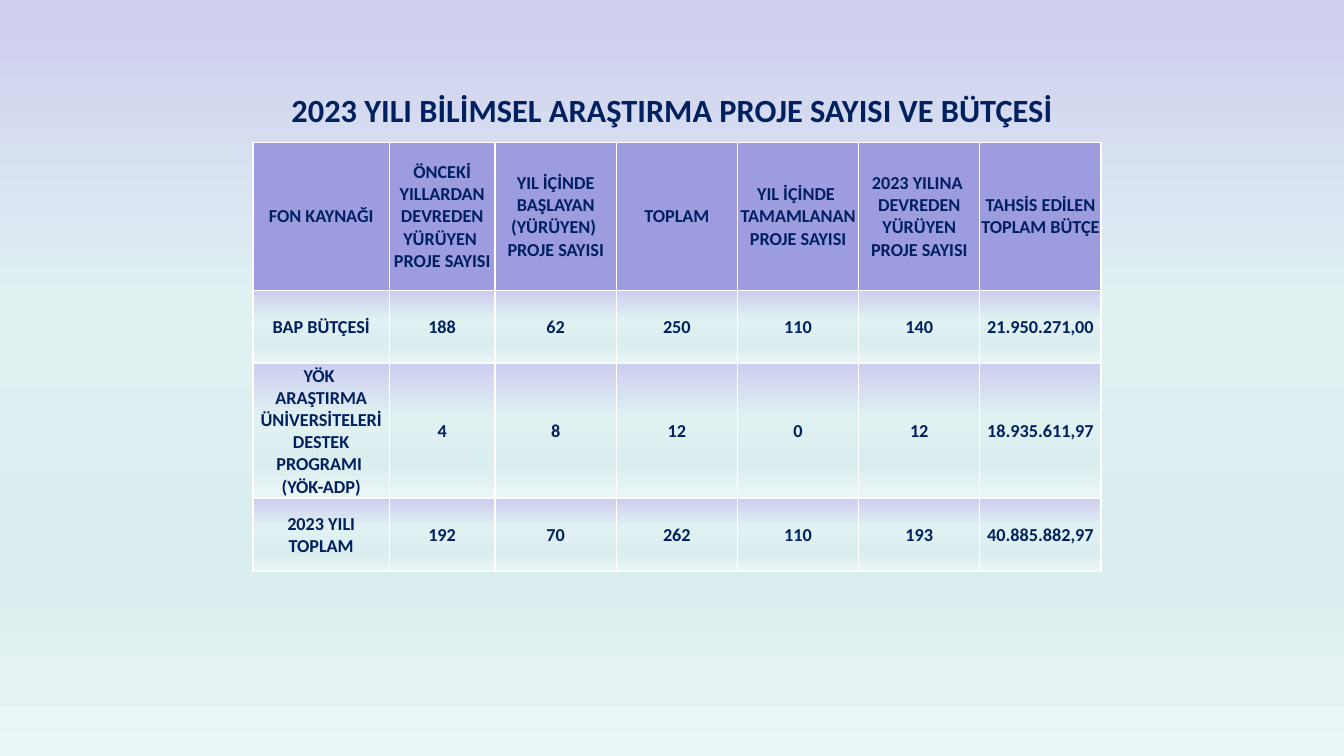
from pptx import Presentation
from pptx import util as u
from pptx.dml import color
from pptx.enum import text
from pptx.oxml import ns
from lxml import etree

hue = color.RGBColor.from_string
NAVY, HEAD, WHITE = "002060", "9C9CDF", "FFFFFF"
STOPS = [(1, "CECEEF"), (40, "E0F1F2"), (74, "DAEDEF"), (100, "EBF6F7")]
WIDE, TALL = 8.41, 4.26
COLS = [1.35, 1.05] + [(WIDE - 1.35 - 1.05) / 5] * 5
ROWS = [TALL - 0.73 - 1.33 - 0.73, 0.73, 1.33, 0.73]
DATA = [
    ["FON KAYNAĞI",
     "ÖNCEKİ YILLARDAN DEVREDEN YÜRÜYEN \nPROJE SAYISI",
     "YIL İÇİNDE BAŞLAYAN (YÜRÜYEN) \nPROJE SAYISI",
     "TOPLAM",
     "YIL İÇİNDE \nTAMAMLANAN PROJE SAYISI",
     "2023 YILINA \nDEVREDEN YÜRÜYEN PROJE SAYISI",
     "TAHSİS EDİLEN TOPLAM BÜTÇE"],
    ["BAP BÜTÇESİ", "188", "62", "250", "110", "140", "21.950.271,00"],
    ["YÖK \nARAŞTIRMA ÜNİVERSİTELERİ DESTEK PROGRAMI \n(YÖK-ADP)",
     "4", "8", "12", "0", "12", "18.935.611,97"],
    ["2023 YILI TOPLAM", "192", "70", "262", "110", "193", "40.885.882,97"],
]


def shade(fill, node):
    fill.gradient()
    fill.gradient_angle = 270
    stops = next(node.iter(ns.qn("a:gsLst")))
    for old in list(stops):
        stops.remove(old)
    for pos, tone in STOPS:
        stop = etree.SubElement(stops, ns.qn("a:gs"), pos=str(pos * 1000))
        etree.SubElement(stop, ns.qn("a:srgbClr"), val=tone)


def write(frame, words, size):
    for i, line in enumerate(words.split("\n")):
        para = frame.add_paragraph() if i else frame.paragraphs[0]
        para.alignment = text.PP_ALIGN.CENTER
        run = para.add_run()
        run.text = line
        run.font.name = "Calibri"
        run.font.size = u.Pt(size)
        run.font.bold = True
        run.font.color.rgb = hue(NAVY)


deck = Presentation()
deck.slide_width, deck.slide_height = u.Inches(13.33), u.Inches(7.5)
slide = deck.slides.add_slide(deck.slide_layouts[5])
shade(slide.background.fill, slide.element)

title = slide.shapes.title
title.element.set("useBgFill", "1")
title.left, title.top = u.Inches(2.46), u.Inches(0.69)
title.width, title.height = u.Inches(8.42), u.Inches(0.79)
title.text_frame.vertical_anchor = text.MSO_ANCHOR.MIDDLE
title.text_frame.auto_size = text.MSO_AUTO_SIZE.NONE
write(title.text_frame, "2023 YILI BİLİMSEL ARAŞTIRMA PROJE SAYISI VE BÜTÇESİ", 23.1)

table = slide.shapes.add_table(
    len(ROWS), len(COLS), u.Inches(2.51), u.Inches(1.41),
    u.Inches(WIDE), u.Inches(TALL)).table
for col, wide in zip(table.columns, COLS):
    col.width = u.Inches(wide)
for row, tall in zip(table.rows, ROWS):
    row.height = u.Inches(tall)

for r, line in enumerate(DATA):
    for c, words in enumerate(line):
        cell = table.cell(r, c)
        cell.margin_left = cell.margin_right = cell.margin_top = u.Inches(0.01)
        cell.margin_bottom = 0
        cell.vertical_anchor = text.MSO_ANCHOR.MIDDLE
        write(cell.text_frame, words, 13)
        if r:
            shade(cell.fill, cell._tc)
        else:
            cell.fill.solid()
            cell.fill.fore_color.rgb = hue(HEAD)
        props = cell._tc.get_or_add_tcPr()
        for i, side in enumerate("LRTB"):
            edge = etree.Element(ns.qn("a:ln" + side), w=str(u.Pt(1)))
            paint = etree.SubElement(edge, ns.qn("a:solidFill"))
            etree.SubElement(paint, ns.qn("a:srgbClr"), val=WHITE)
            props.insert(i, edge)

deck.save("out.pptx")
